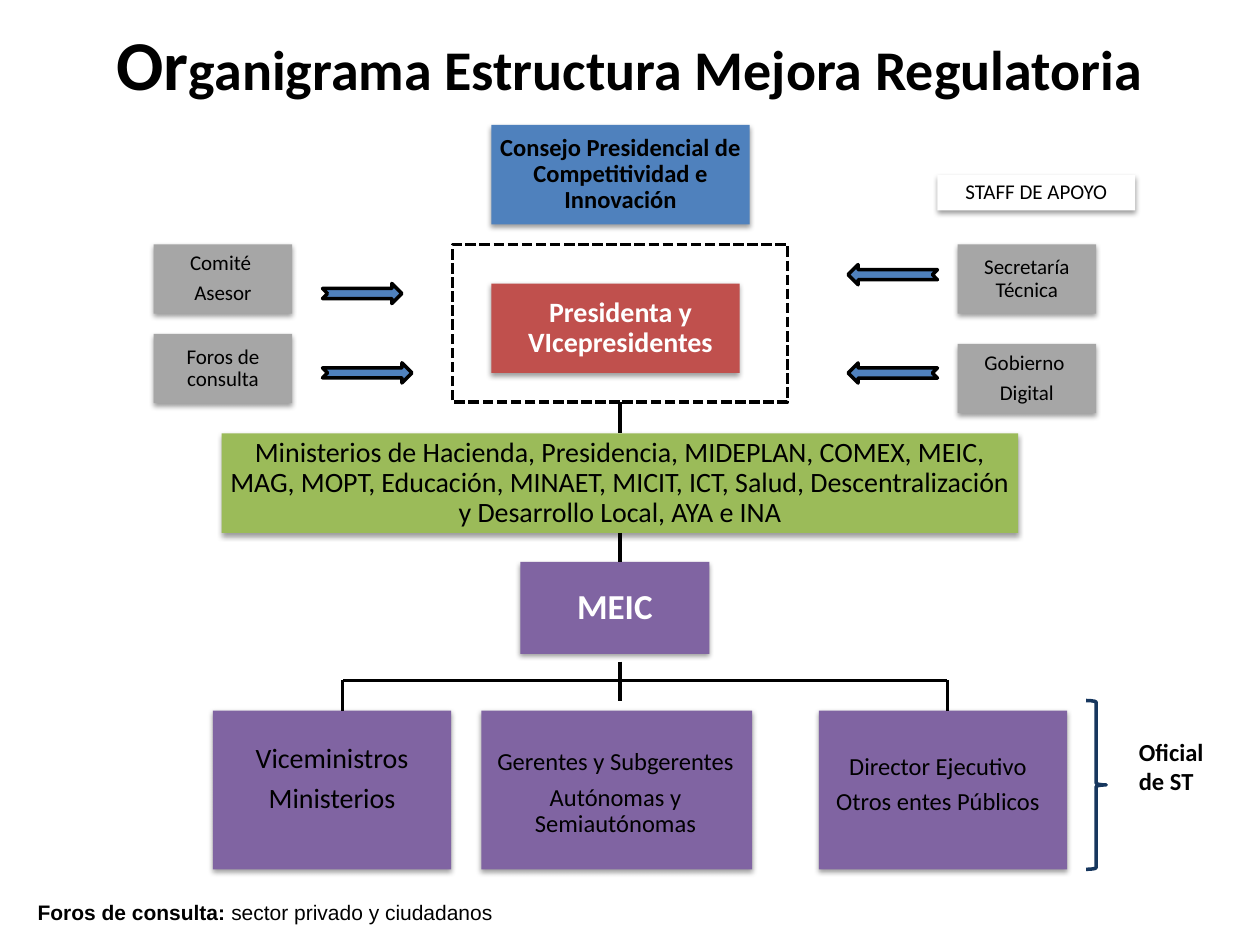
from dataclasses import dataclass
from typing import Optional

from lxml.etree import SubElement
from pptx import Presentation
from pptx.dml.color import RGBColor
from pptx.enum.dml import MSO_LINE
from pptx.enum.shapes import MSO_CONNECTOR, MSO_SHAPE
from pptx.enum.text import MSO_ANCHOR, PP_ALIGN
from pptx.oxml.ns import qn
from pptx.util import Inches, Pt


@dataclass(frozen=True)
class Theme:
    font: str = "Calibri"
    note_font: str = "Arial"
    black: str = "000000"
    white: str = "FFFFFF"
    blue: str = "4F81BD"
    red: str = "C0504D"
    green: str = "9BBB59"
    purple: str = "8064A2"
    gray: str = "A6A6A6"
    navy: str = "17375E"
    title_large: int = 40
    title: int = 32
    heading: int = 20
    large: int = 16
    medium: int = 14
    small: int = 12
    line: float = 2
    trunk: float = 2.25


THEME = Theme()


@dataclass(frozen=True)
class Box:
    left: float
    top: float
    width: float
    height: float
    lines: tuple
    fill: str
    size: int
    color: str = THEME.black
    bold: bool = False
    insets: tuple = (0.01, 0.01, 0.01, 0.01)


@dataclass(frozen=True)
class Arrow:
    left: float
    top: float
    width: float
    rotation: int = 0


@dataclass(frozen=True)
class Link:
    start: tuple
    end: tuple
    width: float = THEME.line
    source: Optional[str] = None
    target: Optional[str] = None


@dataclass(frozen=True)
class Span:
    text: str
    size: int
    bold: bool = False


SIDE_WIDTH, SIDE_HEIGHT = 1.1, 0.55
LEFT_SIDE, RIGHT_SIDE = 1.22, 7.6
BRANCH_TOP, BRANCH_HEIGHT = 5.64, 1.26
TRUNK, BUS = 4.92, 5.4
BUS_LEFT, BUS_RIGHT = 2.72, 7.52


def side_box(left: float, top: float, *lines: str) -> Box:
    return Box(left, top, SIDE_WIDTH, SIDE_HEIGHT, lines, THEME.gray, THEME.small)


def branch_box(left: float, width: float, size: int, insets: tuple, *lines: str) -> Box:
    return Box(left, BRANCH_TOP, width, BRANCH_HEIGHT, lines, THEME.purple, size, insets=insets)


BOXES = {
    "consejo": Box(3.9, 0.99, 2.05, 0.79, ("Consejo Presidencial de Competitividad e Innovación",),
                   THEME.blue, THEME.medium, bold=True),
    "presidenta": Box(3.9, 2.25, 1.97, 0.71, ("Presidenta y VIcepresidentes",), THEME.red,
                      THEME.large, THEME.white, True, (0.09, 0.01, 0.01, 0.01)),
    "ministerios": Box(1.76, 3.44, 6.32, 0.79, (
        "Ministerios de Hacienda, Presidencia, MIDEPLAN, COMEX, MEIC, MAG, MOPT, Educación, "
        "MINAET, MICIT, ICT, Salud, Descentralización y Desarrollo Local, AYA e INA",),
        THEME.green, THEME.large),
    "meic": Box(4.13, 4.46, 1.5, 0.73, ("MEIC",), THEME.purple, THEME.heading, THEME.white, True),
    "viceministros": branch_box(1.69, 1.89, THEME.large, (0.01, 0.01, 0.01, 0.17),
                                "Viceministros", "Ministerios"),
    "gerentes": branch_box(3.82, 2.15, THEME.medium, (0.01, 0.07, 0.03, 0.01),
                           "Gerentes y Subgerentes", "Autónomas y Semiautónomas"),
    "director": branch_box(6.5, 1.97, THEME.medium, (0.01, 0.01, 0.09, 0.09),
                           "Director Ejecutivo", "Otros entes Públicos"),
    "comite": side_box(LEFT_SIDE, 1.94, "Comité ", "Asesor"),
    "foros": side_box(LEFT_SIDE, 2.65, "Foros de consulta"),
    "secretaria": side_box(RIGHT_SIDE, 1.94, "Secretaría Técnica"),
    "gobierno": side_box(RIGHT_SIDE, 2.73, "Gobierno ", "Digital"),
    "staff": Box(7.44, 1.39, 1.57, 0.28, ("STAFF DE APOYO",), THEME.white, THEME.small),
}
ARROWS = (Arrow(2.56, 2.25, 0.63), Arrow(2.56, 2.88, 0.71),
          Arrow(6.73, 2.1, 0.71, 180), Arrow(6.73, 2.88, 0.71, 180))
LINKS = (
    Link((TRUNK, 3.19), (TRUNK, 3.44), THEME.trunk, "frame", "ministerios"),
    Link((TRUNK, 4.23), (TRUNK, 4.46), THEME.trunk, "ministerios"),
    Link((TRUNK, 5.25), (TRUNK, 5.56)),
    Link((BUS_RIGHT, BUS), (BUS_LEFT, BUS)),
    Link((BUS_LEFT, BUS), (BUS_LEFT, BRANCH_TOP)),
    Link((BUS_RIGHT, BUS), (BUS_RIGHT, BRANCH_TOP)),
)


def rgb(color: str) -> RGBColor:
    return RGBColor.from_string(color)


def add_text(paragraph, text: str, *, size: int, color: str = THEME.black,
             bold: bool = False, font: str = THEME.font) -> None:
    run = paragraph.add_run()
    run.text = text
    run.font.name = font
    run.font.size = Pt(size)
    run.font.bold = bold
    run.font.color.rgb = rgb(color)


def add_shadow(shape) -> None:
    effects = shape._element.spPr.find(qn("a:effectLst"))
    shadow = SubElement(effects, qn("a:outerShdw"), blurRad=str(Pt(3.1)), dist=str(Pt(1.6)),
                        dir="5400000", rotWithShape="0")
    color = SubElement(shadow, qn("a:srgbClr"), val=THEME.black)
    SubElement(color, qn("a:alpha"), val="38000")


def add_preset(page, kind, left: float, top: float, width: float, height: float, *,
               fill: Optional[str] = None, line: Optional[str] = None):
    shape = page.shapes.add_shape(kind, Inches(left), Inches(top), Inches(width), Inches(height))
    shape.shadow.inherit = False
    if fill:
        shape.fill.solid()
        shape.fill.fore_color.rgb = rgb(fill)
    else:
        shape.fill.background()
    if line:
        shape.line.color.rgb = rgb(line)
        shape.line.width = Pt(THEME.line)
    else:
        shape.line.fill.background()
    return shape


def draw_box(page, box: Box):
    shape = add_preset(page, MSO_SHAPE.RECTANGLE, box.left, box.top, box.width, box.height,
                       fill=box.fill)
    add_shadow(shape)
    frame = shape.text_frame
    frame.word_wrap = True
    frame.vertical_anchor = MSO_ANCHOR.MIDDLE
    (frame.margin_left, frame.margin_top,
     frame.margin_right, frame.margin_bottom) = map(Inches, box.insets)
    for index, line in enumerate(box.lines):
        paragraph = frame.add_paragraph() if index else frame.paragraphs[0]
        paragraph.alignment = PP_ALIGN.CENTER
        paragraph.line_spacing = 0.9
        paragraph.space_after = Pt(0.35 * box.size)
        add_text(paragraph, line, size=box.size, color=box.color, bold=box.bold)
    return shape


def draw_link(page, link: Link, shapes: dict) -> None:
    connector = page.shapes.add_connector(MSO_CONNECTOR.STRAIGHT, *map(Inches, link.start + link.end))
    connector.line.color.rgb = rgb(THEME.black)
    connector.line.width = Pt(link.width)
    SubElement(connector._element.spPr, qn("a:effectLst"))
    if link.source:
        connector.begin_connect(shapes[link.source], 2)
    if link.target:
        connector.end_connect(shapes[link.target], 0)


def draw_label(page, left: float, top: float, width: float, height: float, *spans: Span,
               align=PP_ALIGN.LEFT, anchor=MSO_ANCHOR.TOP, font: str = THEME.font) -> None:
    label = page.shapes.add_textbox(Inches(left), Inches(top), Inches(width), Inches(height))
    label.text_frame.word_wrap = True
    label.text_frame.vertical_anchor = anchor
    paragraph = label.text_frame.paragraphs[0]
    paragraph.alignment = align
    for span in spans:
        add_text(paragraph, span.text, size=span.size, bold=span.bold, font=font)


def main() -> None:
    deck = Presentation()
    deck.slide_width, deck.slide_height = Inches(10), Inches(7.5)
    page = deck.slides.add_slide(deck.slide_layouts[6])
    shapes = {name: draw_box(page, box) for name, box in BOXES.items()}
    shapes["frame"] = add_preset(page, MSO_SHAPE.RECTANGLE, 3.59, 1.94, 2.66, 1.25,
                                 line=THEME.black)
    shapes["frame"].line.dash_style = MSO_LINE.SQUARE_DOT
    for arrow in ARROWS:
        shape = add_preset(page, MSO_SHAPE.NOTCHED_RIGHT_ARROW, arrow.left, arrow.top,
                           arrow.width, 0.16, fill=THEME.blue, line=THEME.black)
        shape.rotation = arrow.rotation
    for link in LINKS:
        draw_link(page, link, shapes)
    add_preset(page, MSO_SHAPE.RIGHT_BRACE, 8.62, 5.56, 0.16, 1.34, line=THEME.navy)
    draw_label(page, 0.5, 0, 9, 0.99, Span("Or", THEME.title_large, True),
               Span("ganigrama Estructura Mejora Regulatoria", THEME.title, True),
               align=PP_ALIGN.CENTER, anchor=MSO_ANCHOR.MIDDLE)
    draw_label(page, 8.94, 5.8, 0.79, 0.57, Span("Oficial de ST", THEME.medium, True))
    draw_label(page, 0.2, 7.09, 5.12, 0.3, Span("Foros de consulta:", THEME.small, True),
               Span(" sector privado y ciudadanos", THEME.small),
               align=PP_ALIGN.JUSTIFY, font=THEME.note_font)
    deck.save("out.pptx")


if __name__ == "__main__":
    main()
